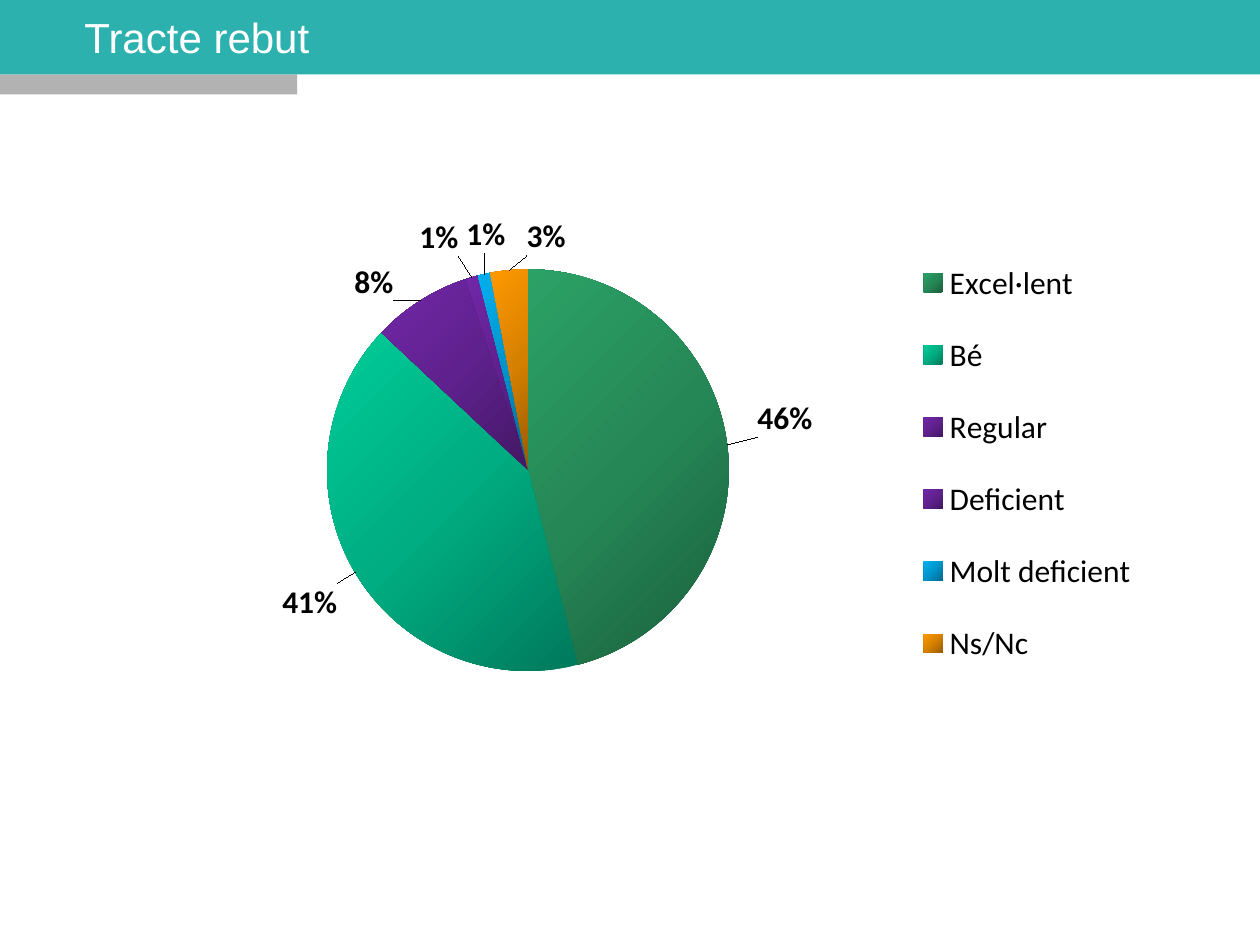
from copy import deepcopy

from lxml import etree
from pptx import Presentation
from pptx.chart.data import CategoryChartData
from pptx.dml.color import RGBColor
from pptx.enum.chart import XL_CHART_TYPE as ChartType
from pptx.enum.chart import XL_LABEL_POSITION as LabelPosition
from pptx.enum.chart import XL_LEGEND_POSITION as LegendPosition
from pptx.enum.shapes import MSO_SHAPE as Shape
from pptx.enum.text import MSO_ANCHOR as Anchor
from pptx.enum.text import PP_ALIGN as Align
from pptx.oxml import parse_xml
from pptx.oxml.ns import nsdecls, qn
from pptx.util import Inches, Pt

WIDTH, HEIGHT = 10, 7.5
TITLE = "Tracte rebut"
BAND_HEIGHT = 0.59
BANDS = [  # colour, left, top, width, height
    ("B2B2B2", 0, BAND_HEIGHT, 2.36, 0.16),
    ("2CB1AE", 0, 0, WIDTH, BAND_HEIGHT),
]
CHART_BOX = (0.41, 1.05, 9.11, 5.53)
PLOT_SHARES = {"x": 0.24, "y": 0.19, "w": 0.35, "h": 0.59}
LEGEND_SHARES = {"x": 0.74, "y": 0.14, "w": 0.22, "h": 0.67}

GREEN = ("1A5F3C", "258756", "2BA166")
MINT = ("00795B", "00AC81", "00CC99")
PURPLE = ("431764", "5F218E", "7128A8")
BLUE = ("00688E", "0094CA", "00B0F0")
ORANGE = ("975B00", "D78100", "FF9900")
ANSWERS = [  # category, percentage, gradient, label shift as shares of the chart
    ("Excel·lent", 46, GREEN, (0.02, -0.01)),
    ("Bé", 41, MINT, (-0.01, 0.01)),
    ("Regular", 8, PURPLE, (-0.02, 0.01)),
    ("Deficient", 1, PURPLE, (-0.01, -0.02)),
    ("Molt deficient", 1, BLUE, (0.02, -0.02)),
    ("Ns/Nc", 3, ORANGE, (0.05, -0.01)),
]


def color(value):
    return RGBColor.from_string(value)


def format_font(font, size=18, name="Calibri", fill="000000", bold=False):
    font.size, font.name, font.bold = Pt(size), name, bold
    font.color.rgb = color(fill)


def write_text(shape, text, align=Align.LEFT, **font_format):
    frame = shape.text_frame
    frame.margin_left = frame.margin_right = frame.margin_top = frame.margin_bottom = 0
    frame.word_wrap, frame.vertical_anchor = True, Anchor.MIDDLE
    frame.text = text
    paragraph = frame.paragraphs[0]
    paragraph.alignment = align
    format_font(paragraph.runs[0].font, **font_format)


def add_band(slide, fill, *box):
    """Add a plain rectangle behind the title."""
    band = slide.shapes.add_shape(Shape.RECTANGLE, *map(Inches, box))
    band.shadow.inherit = False
    band.fill.solid()
    band.fill.fore_color.rgb = color(fill)
    band.line.fill.background()
    slide.shapes.title._element.addprevious(band._element)


def manual_layout(shares, modes=""):
    values = "".join(f'<c:{key} val="{value}"/>' for key, value in shares.items())
    return (f'<c:layout {nsdecls("c")}><c:manualLayout>{modes}{values}'
            "</c:manualLayout></c:layout>")


def place_part(element, index, shares, target=""):
    """Fix a chart part, its layout standing at the given child index."""
    for layout in element.findall(qn("c:layout")):
        element.remove(layout)
    modes = target + '<c:xMode val="edge"/><c:yMode val="edge"/>'
    element.insert(index, parse_xml(manual_layout(shares, modes)))


def fill_gradient(point, colors):
    stops = "".join(f'<a:gs pos="{position}"><a:srgbClr val="{value}"/></a:gs>'
                    for position, value in zip((0, 50000, 100000), colors))
    point.format.line.fill.background()
    properties = point.format.fill._xPr
    properties.insert(0, parse_xml(
        f'<a:gradFill {nsdecls("a")} rotWithShape="1"><a:gsLst>{stops}</a:gsLst>'
        f'<a:lin ang="{225 * 60000}" scaled="0"/></a:gradFill>'))


def label_slices(series):
    labels = series.data_labels
    labels.show_value, labels.show_percentage = False, True
    labels.number_format, labels.number_format_is_linked = "0%", False
    labels.position = LabelPosition.OUTSIDE_END
    format_font(labels.font, bold=True)
    element = labels._element
    shared = [child for child in element
              if etree.QName(child).localname != "showLeaderLines"]
    for index, (_, _, _, (x, y)) in enumerate(ANSWERS):
        label = parse_xml(f'<c:dLbl {nsdecls("c")}><c:idx val="{index}"/>'
                          f'{manual_layout({"x": x, "y": y})}</c:dLbl>')
        label.extend(deepcopy(child) for child in shared)
        element.insert(index, label)


def add_pie(slide):
    data = CategoryChartData()
    data.categories = [answer[0] for answer in ANSWERS]
    data.add_series("Series 1", [answer[1] for answer in ANSWERS])
    chart = slide.shapes.add_chart(
        ChartType.PIE, *map(Inches, CHART_BOX), data).chart
    chart.has_title = False
    format_font(chart.font, name="Arial")
    chart.has_legend = True
    legend = chart.legend
    legend.position = LegendPosition.RIGHT
    legend.include_in_layout = False
    format_font(legend.font)
    place_part(legend._element, 1, LEGEND_SHARES)
    place_part(chart._chartSpace.chart.plotArea, 0, PLOT_SHARES,
               '<c:layoutTarget val="inner"/>')
    chart.plots[0].vary_by_categories = True
    series = chart.plots[0].series[0]
    for index, answer in enumerate(ANSWERS):
        fill_gradient(series.points[index], answer[2])
    label_slices(series)


def main():
    presentation = Presentation()
    presentation.slide_width, presentation.slide_height = Inches(WIDTH), Inches(HEIGHT)
    slide = presentation.slides.add_slide(presentation.slide_layouts[5])
    title = slide.shapes.title
    title.left, title.top = Inches(0.67), 0
    title.width, title.height = Inches(9.17), Inches(BAND_HEIGHT)
    write_text(title, TITLE, size=24, name="Arial", fill="FFFFFF")
    for band in BANDS:
        add_band(slide, *band)
    add_pie(slide)
    presentation.save("out.pptx")


if __name__ == "__main__":
    main()
